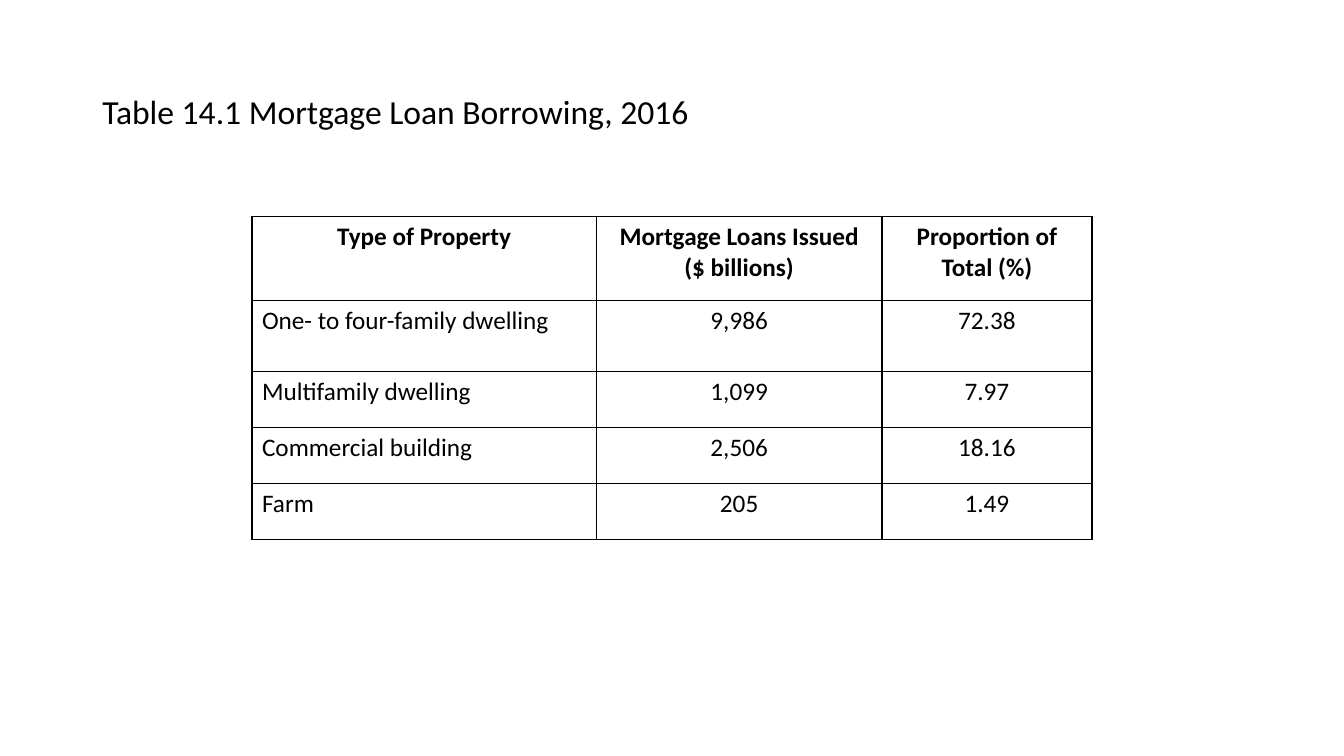
from dataclasses import dataclass

from lxml import etree
from pptx import Presentation
from pptx import util as u
from pptx.dml.color import RGBColor
from pptx.enum import text
from pptx.oxml import ns
from pptx.slide import Slide
from pptx.table import _Cell
from pptx.text.text import TextFrame

BLACK = RGBColor(0x00, 0x00, 0x00)
FONT_NAME = "Calibri"
BORDER_WIDTH = u.Pt(1)


@dataclass(frozen=True)
class Column:
    heading: str
    width: float
    alignment: text.PP_ALIGN


@dataclass(frozen=True)
class Row:
    values: tuple[str, ...]
    height: float
    bold: bool = False


COLUMNS = (
    Column("Type of Property", 246, text.PP_ALIGN.LEFT),
    Column("Mortgage Loans Issued ($ billions)", 204, text.PP_ALIGN.CENTER),
    Column("Proportion of Total (%)", 150, text.PP_ALIGN.CENTER),
)
ROWS = (
    Row(tuple(column.heading for column in COLUMNS), 59.8, bold=True),
    Row(("One- to four-family dwelling", "9,986", "72.38"), 50.6),
    Row(("Multifamily dwelling", "1,099", "7.97"), 40),
    Row(("Commercial building", "2,506", "18.16"), 40),
    Row(("Farm", "205", "1.49"), 40),
)


def write_text(frame: TextFrame, content: str, *, size: float, bold: bool = False,
               alignment: text.PP_ALIGN = text.PP_ALIGN.LEFT,
               line_spacing: float = 1.0) -> None:
    paragraph = frame.paragraphs[0]
    paragraph.alignment = alignment
    paragraph.line_spacing = line_spacing
    run = paragraph.add_run()
    run.text = content
    run.font.name = FONT_NAME
    run.font.size = u.Pt(size)
    run.font.bold = bold
    run.font.color.rgb = BLACK


def format_cell(cell: _Cell) -> None:
    """Give the cell a solid border on every side and no fill."""
    properties = cell._tc.get_or_add_tcPr()
    for side in ("lnL", "lnR", "lnT", "lnB"):
        line = etree.SubElement(properties, ns.qn(f"a:{side}"), w=str(BORDER_WIDTH))
        fill = etree.SubElement(line, ns.qn("a:solidFill"))
        etree.SubElement(fill, ns.qn("a:srgbClr"), val=str(BLACK))
    cell.fill.background()


def add_title(slide: Slide, content: str) -> None:
    title = slide.shapes.add_textbox(u.Pt(66), u.Pt(28.8), u.Pt(828), u.Pt(104.4))
    title.text_frame.word_wrap = True
    title.text_frame.vertical_anchor = text.MSO_ANCHOR.MIDDLE
    write_text(title.text_frame, content, size=24, line_spacing=0.9)


def add_loan_table(slide: Slide) -> None:
    width = sum(column.width for column in COLUMNS)
    height = sum(row.height for row in ROWS)
    table = slide.shapes.add_table(len(ROWS), len(COLUMNS), u.Pt(180), u.Pt(154.8),
                                   u.Pt(width), u.Pt(height)).table
    table.horz_banding = False

    for index, column in enumerate(COLUMNS):
        table.columns[index].width = u.Pt(column.width)

    for row_index, row in enumerate(ROWS):
        table.rows[row_index].height = u.Pt(row.height)
        for column_index, (column, value) in enumerate(zip(COLUMNS, row.values)):
            cell = table.cell(row_index, column_index)
            format_cell(cell)
            alignment = text.PP_ALIGN.CENTER if row.bold else column.alignment
            write_text(cell.text_frame, value, size=18, bold=row.bold,
                       alignment=alignment)


def main() -> None:
    # Slide
    presentation = Presentation()
    presentation.slide_width = u.Pt(960)
    presentation.slide_height = u.Pt(540)
    slide = presentation.slides.add_slide(presentation.slide_layouts[6])

    # Content
    add_title(slide, "Table 14.1 Mortgage Loan Borrowing, 2016")
    add_loan_table(slide)

    presentation.save("out.pptx")


if __name__ == "__main__":
    main()
